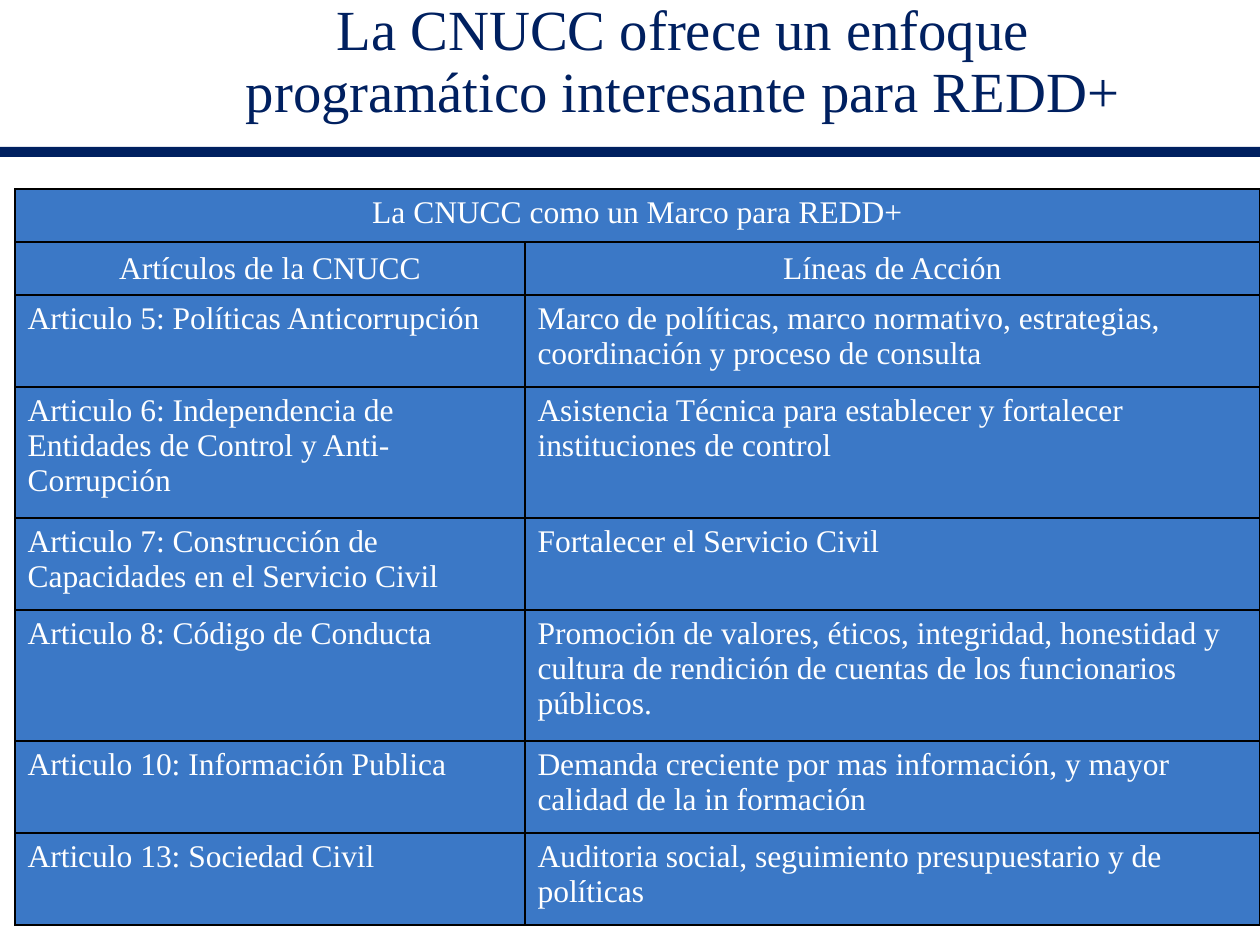
"""Build the slide on the CNUCC as a framework for REDD+."""
from lxml.etree import SubElement
from pptx import Presentation
from pptx.dml.color import RGBColor
from pptx.enum.shapes import MSO_SHAPE
from pptx.enum.text import MSO_ANCHOR, PP_ALIGN
from pptx.oxml.ns import qn
from pptx.util import Pt

TITLE = "La CNUCC ofrece un enfoque programático interesante para REDD+"
ROWS = [
    (53, "La CNUCC como un Marco para REDD+", ""),
    (53, "Artículos de la CNUCC", "Líneas de Acción"),
    (92, "Articulo 5: Políticas Anticorrupción",
     "Marco de políticas, marco normativo, estrategias, coordinación y proceso de consulta"),
    (131, "Articulo 6: Independencia de Entidades de Control y Anti-Corrupción",
     "Asistencia Técnica para establecer y fortalecer instituciones de control"),
    (92, "Articulo 7: Construcción de Capacidades en el Servicio Civil",
     "Fortalecer el Servicio Civil"),
    (131, "Articulo 8: Código de Conducta",
     "Promoción de valores, éticos, integridad, honestidad y cultura de rendición "
     "de cuentas de los funcionarios públicos."),
    (92, "Articulo 10: Información Publica",
     "Demanda creciente por mas información, y mayor calidad de la in formación"),
    (92, "Articulo 13: Sociedad Civil",
     "Auditoria social, seguimiento presupuestario y de políticas"),
]
COLUMN_WIDTHS = (510, 735)
HEADER_ROWS = 2
COLORS = {"navy": "002060", "cell": "3B78C6", "text": "FFFFFF", "border": "000000"}
FONT = "Times New Roman"
EMU_PER_PX = 914400 // 126


def px(*lengths):
    return [round(length * EMU_PER_PX) for length in lengths]


def color(name):
    return RGBColor.from_string(COLORS[name])


def style_text(frame, size, color_name, alignment):
    for para in frame.paragraphs:
        para.alignment = alignment
        for span in para.runs:
            span.font.name = FONT
            span.font.size = Pt(size)
            span.font.color.rgb = color(color_name)


def add_borders(cell):
    properties = cell._tc.get_or_add_tcPr()
    for index, side in enumerate(("a:lnL", "a:lnR", "a:lnT", "a:lnB")):
        line = SubElement(properties, qn(side), w=str(Pt(1)))
        fill = SubElement(line, qn("a:solidFill"))
        SubElement(fill, qn("a:srgbClr"), val=COLORS["border"])
        properties.insert(index, line)


def add_title(slide):
    box = slide.shapes.add_textbox(*px(179, 21, 1008, 84))
    frame = box.text_frame
    frame.word_wrap = True
    frame.vertical_anchor = MSO_ANCHOR.MIDDLE
    frame.text = TITLE
    frame.paragraphs[0].line_spacing = 0.9
    style_text(frame, 32.4, "navy", PP_ALIGN.CENTER)


def add_articles_table(slide):
    height = sum(row[0] for row in ROWS)
    position = px(15, 189, sum(COLUMN_WIDTHS), height)
    table = slide.shapes.add_table(len(ROWS), len(COLUMN_WIDTHS), *position).table
    for column, width in zip(table.columns, px(*COLUMN_WIDTHS)):
        column.width = width
    for row_index, (row_height, *texts) in enumerate(ROWS):
        table.rows[row_index].height = px(row_height)[0]
        is_header = row_index < HEADER_ROWS
        for column_index, text in enumerate(texts):
            cell = table.cell(row_index, column_index)
            cell.text = text
            cell.fill.solid()
            cell.fill.fore_color.rgb = color("cell")
            cell.vertical_anchor = MSO_ANCHOR.MIDDLE if row_index == 1 else MSO_ANCHOR.TOP
            style_text(cell.text_frame, 18, "text",
                       PP_ALIGN.CENTER if is_header else PP_ALIGN.LEFT)
            for span in cell.text_frame.paragraphs[0].runs:
                span.font.bold = False
            add_borders(cell)
    table.cell(0, 0).merge(table.cell(0, 1))


def add_divider(slide):
    bar = slide.shapes.add_shape(MSO_SHAPE.RECTANGLE, *px(0, 147, 1260, 10))
    bar.shadow.inherit = False
    bar.fill.solid()
    bar.fill.fore_color.rgb = color("navy")
    bar.line.fill.background()


def main():
    deck = Presentation()
    deck.slide_width, deck.slide_height = px(1260, 945)
    slide = deck.slides.add_slide(deck.slide_layouts[6])
    add_title(slide)
    add_articles_table(slide)
    add_divider(slide)
    deck.save("out.pptx")


if __name__ == "__main__":
    main()
